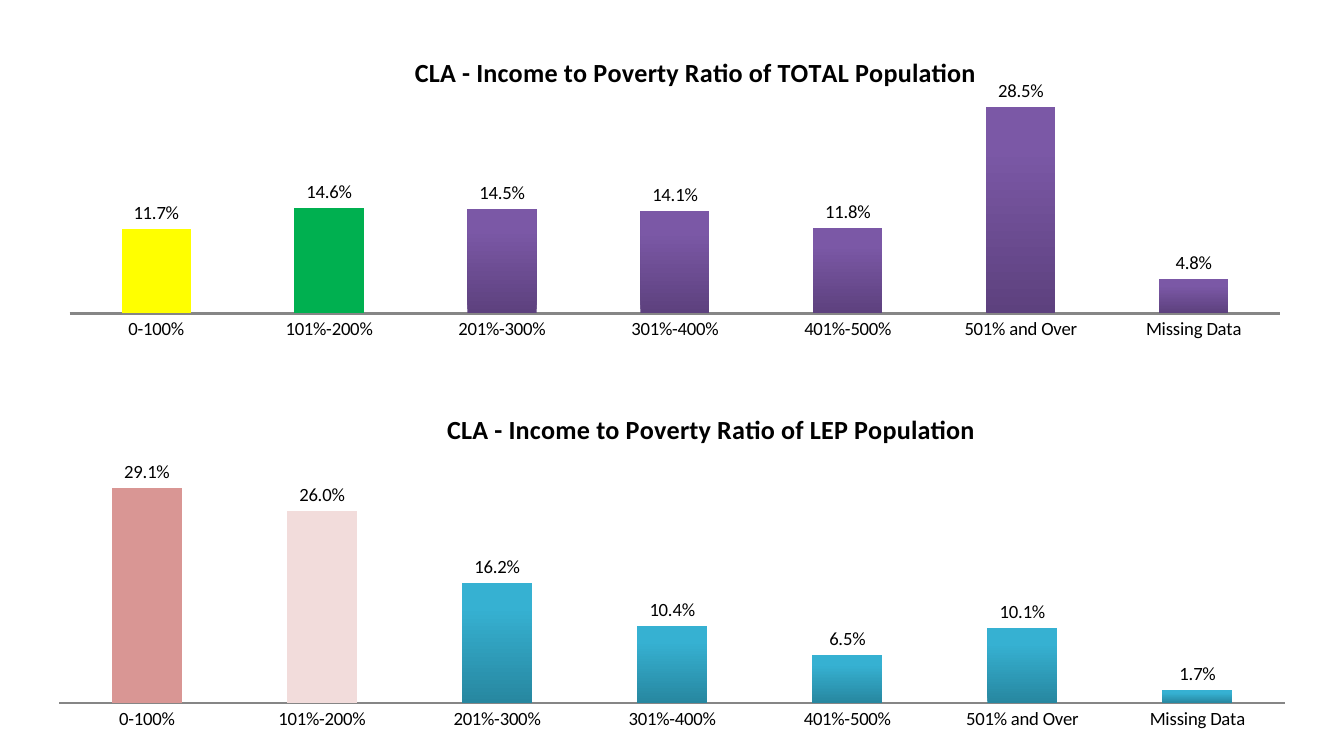
import pptx
import pptx.chart.data
import pptx.dml.color
import pptx.enum.chart
import pptx.oxml
import pptx.oxml.ns
import pptx.util
from pptx.util import Cm

CATEGORIES = ["0-100%", "101%-200%", "201%-300%", "301%-400%",
              "401%-500%", "501% and Over", "Missing Data"]
PERCENT = "0.0%"


def color(hex_string):
    return pptx.dml.color.RGBColor.from_string(hex_string)


def set_layout(parent, index, **fractions):
    """Place a chart part by fractions of the chart's size."""
    for old_layout in parent.findall(pptx.oxml.ns.qn("c:layout")):
        parent.remove(old_layout)
    target = '<c:layoutTarget val="inner"/>' if "w" in fractions else ""
    modes = "".join(f'<c:{key}Mode val="edge"/>' for key in "xy")
    values = "".join(f'<c:{key} val="{value}"/>' for key, value in fractions.items())
    parent.insert(index, pptx.oxml.parse_xml(
        f'<c:layout {pptx.oxml.ns.nsdecls("c")}><c:manualLayout>'
        f"{target}{modes}{values}</c:manualLayout></c:layout>"))


def add_title(chart, text, x, y):
    chart.has_title = True
    title = chart.chart_title
    title.include_in_layout = False
    title.text_frame.text = text
    font = title.text_frame.paragraphs[0].runs[0].font
    font.name = "Calibri"
    font.size = pptx.util.Pt(14)
    font.bold = True
    font.color.rgb = color("000000")
    set_layout(title._element, 1, x=x, y=y)


def style_axes(chart, line_width):
    tick_none = pptx.enum.chart.XL_TICK_MARK.NONE
    category_axis = chart.category_axis
    category_axis.major_tick_mark = tick_none
    category_axis.minor_tick_mark = tick_none
    category_axis.format.line.color.rgb = color("868686")
    category_axis.format.line.width = pptx.util.Pt(line_width)
    value_axis = chart.value_axis
    value_axis.minimum_scale = 0
    value_axis.maximum_scale = 0.3
    value_axis.has_major_gridlines = False
    value_axis.tick_labels.number_format = PERCENT
    value_axis.tick_labels.number_format_is_linked = False
    value_axis.visible = False


def style_columns(chart, gradient, point_colors):
    plot = chart.plots[0]
    plot.gap_width = 150
    plot.overlap = -25
    plot.vary_by_categories = False
    plot.has_data_labels = True
    labels = plot.data_labels
    labels.show_value = True
    labels.number_format = PERCENT
    labels.number_format_is_linked = False
    labels.position = pptx.enum.chart.XL_LABEL_POSITION.OUTSIDE_END

    # Gradient from the dark foot to the light top
    series = plot.series[0]
    series.invert_if_negative = False
    fill = series.format.fill
    fill.gradient()
    fill.gradient_angle = 90
    for stop, position, shade in zip(fill.gradient_stops, (0, 0.8), gradient):
        stop.position = position
        stop.color.rgb = color(shade)

    # Highlighted low-income columns
    for index, shade in enumerate(point_colors):
        point_fill = series.points[index].format.fill
        point_fill.solid()
        point_fill.fore_color.rgb = color(shade)


def add_column_chart(slide, box, values):
    data = pptx.chart.data.CategoryChartData(number_format=PERCENT)
    data.categories = CATEGORIES
    data.add_series("Series 1", values)
    chart = slide.shapes.add_chart(
        pptx.enum.chart.XL_CHART_TYPE.COLUMN_CLUSTERED,
        *(Cm(length) for length in box), data).chart
    chart.has_legend = False
    chart.font.name = "Calibri"
    chart.font.size = pptx.util.Pt(10)
    chart.font.color.rgb = color("000000")
    return chart


def add_poverty_chart(slide, population, box, values, gradient, point_colors,
                      title_place, plot_top, plot_height, line_width):
    chart = add_column_chart(slide, box, values)
    add_title(chart, f"CLA - Income to Poverty Ratio of {population} Population",
              *title_place)
    style_axes(chart, line_width)
    style_columns(chart, gradient, point_colors)
    plot_area = chart._chartSpace.chart.plotArea
    set_layout(plot_area, 0, x=0.02, y=plot_top, w=0.96, h=plot_height)


def main():
    presentation = pptx.Presentation()
    presentation.slide_width = Cm(25.4)
    presentation.slide_height = Cm(14.29)
    slide = presentation.slides.add_slide(presentation.slide_layouts[6])

    # Total population
    add_poverty_chart(
        slide, "TOTAL", (0.84, 0.58, 23.83, 5.94),
        (0.117, 0.146, 0.145, 0.141, 0.118, 0.285, 0.048),
        gradient=("5D417E", "7B58A6"), point_colors=("FFFF00", "00B050"),
        title_place=(0.29, 0.06), plot_top=0.21, plot_height=0.69, line_width=1.5)

    # Population with limited English proficiency
    add_poverty_chart(
        slide, "LEP", (0.64, 7.14, 24.13, 6.76),
        (0.291, 0.26, 0.162, 0.104, 0.065, 0.101, 0.017),
        gradient=("2787A0", "36B1D2"), point_colors=("D99694", "F2DCDB"),
        title_place=(0.32, 0.08), plot_top=0.29, plot_height=0.62, line_width=0.75)

    presentation.save("out.pptx")


if __name__ == "__main__":
    main()
